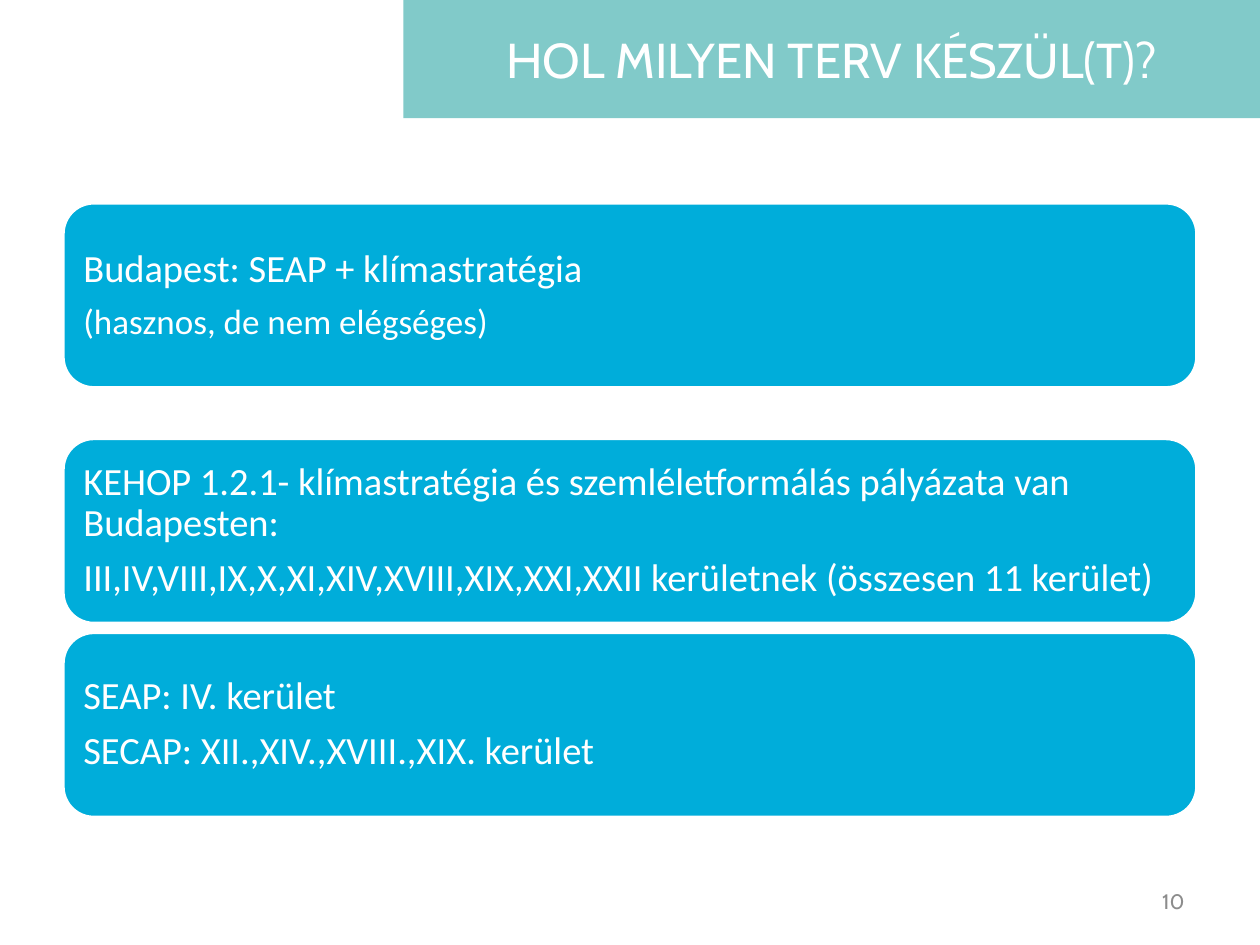
from dataclasses import dataclass

from pptx import Presentation
from pptx.dml.color import RGBColor
from pptx.enum.shapes import MSO_SHAPE
from pptx.enum.text import MSO_ANCHOR, PP_ALIGN
from pptx.util import Cm, Pt


@dataclass(frozen=True)
class Theme:
    band: RGBColor = RGBColor(0x81, 0xCA, 0xC9)
    panel: RGBColor = RGBColor(0x00, 0xAD, 0xDA)
    light: RGBColor = RGBColor(0xFF, 0xFF, 0xFF)
    muted: RGBColor = RGBColor(0x8C, 0x8C, 0x8C)
    heading_font: str = "Cabin"
    body_font: str = "Calibri"
    title_size: int = 28
    body_size: int = 22
    remark_size: int = 20
    number_size: int = 12


class SlideBuilder:
    def __init__(self, slide, theme):
        self.slide = slide
        self.theme = theme

    def format_paragraph(self, paragraph, font_name, size, color, align):
        paragraph.alignment = align
        for run in paragraph.runs:
            run.font.name = font_name
            run.font.size = Pt(size)
            run.font.color.rgb = color

    def title(self, text, left, top, width, height):
        heading = self.slide.shapes.title
        heading.left, heading.top = Cm(left), Cm(top)
        heading.width, heading.height = Cm(width), Cm(height)
        heading.fill.solid()
        heading.fill.fore_color.rgb = self.theme.band
        frame = heading.text_frame
        frame.text = text
        frame.vertical_anchor = MSO_ANCHOR.MIDDLE
        self.format_paragraph(frame.paragraphs[0], self.theme.heading_font,
                              self.theme.title_size, self.theme.light, PP_ALIGN.CENTER)

    def panel(self, lines, left, top, width, height):
        panel = self.slide.shapes.add_shape(
            MSO_SHAPE.ROUNDED_RECTANGLE, Cm(left), Cm(top), Cm(width), Cm(height))
        panel.shadow.inherit = False
        panel.fill.solid()
        panel.fill.fore_color.rgb = self.theme.panel
        panel.line.color.rgb = self.theme.light
        panel.line.width = Pt(2)
        frame = panel.text_frame
        frame.word_wrap = True
        frame.vertical_anchor = MSO_ANCHOR.MIDDLE
        frame.margin_left = frame.margin_right = Cm(0.23)
        frame.margin_top = frame.margin_bottom = Cm(0.23)
        frame.text = "\n".join(text for text, size in lines)
        for paragraph, (text, size) in zip(frame.paragraphs, lines):
            paragraph.line_spacing = 0.9
            paragraph.space_after = Pt(0.35 * size)
            self.format_paragraph(paragraph, self.theme.body_font, size,
                                  self.theme.light, PP_ALIGN.LEFT)

    def page_number(self, number, left, top, width, height):
        box = self.slide.shapes.add_textbox(Cm(left), Cm(top), Cm(width), Cm(height))
        frame = box.text_frame
        frame.word_wrap = True
        frame.vertical_anchor = MSO_ANCHOR.MIDDLE
        frame.text = number
        self.format_paragraph(frame.paragraphs[0], self.theme.heading_font,
                              self.theme.number_size, self.theme.muted, PP_ALIGN.RIGHT)


def main():
    presentation = Presentation()
    presentation.slide_width, presentation.slide_height = Cm(25.4), Cm(19.05)
    title_only = presentation.slide_layouts[5]
    theme = Theme()
    builder = SlideBuilder(presentation.slides.add_slide(title_only), theme)

    builder.title("HOL MILYEN TERV KÉSZÜL(T)?", 8.13, 0, 17.27, 2.38)

    body, remark = theme.body_size, theme.remark_size
    plans = [
        (4.09, [("Budapest: SEAP + klímastratégia", body),
                ("(hasznos, de nem elégséges)", remark)]),
        (8.84, [("KEHOP 1.2.1- klímastratégia és szemléletformálás pályázata van Budapesten:", body),
                ("III,IV,VIII,IX,X,XI,XIV,XVIII,XIX,XXI,XXII kerületnek (összesen 11 kerület)", body)]),
        (12.75, [("SEAP: IV. kerület", body),
                 ("SECAP: XII.,XIV.,XVIII.,XIX. kerület", body)]),
    ]
    for top, lines in plans:
        builder.panel(lines, 1.27, top, 22.86, 3.73)

    builder.page_number("10", 18.2, 17.65, 5.93, 1.02)
    presentation.save("out.pptx")


if __name__ == "__main__":
    main()
